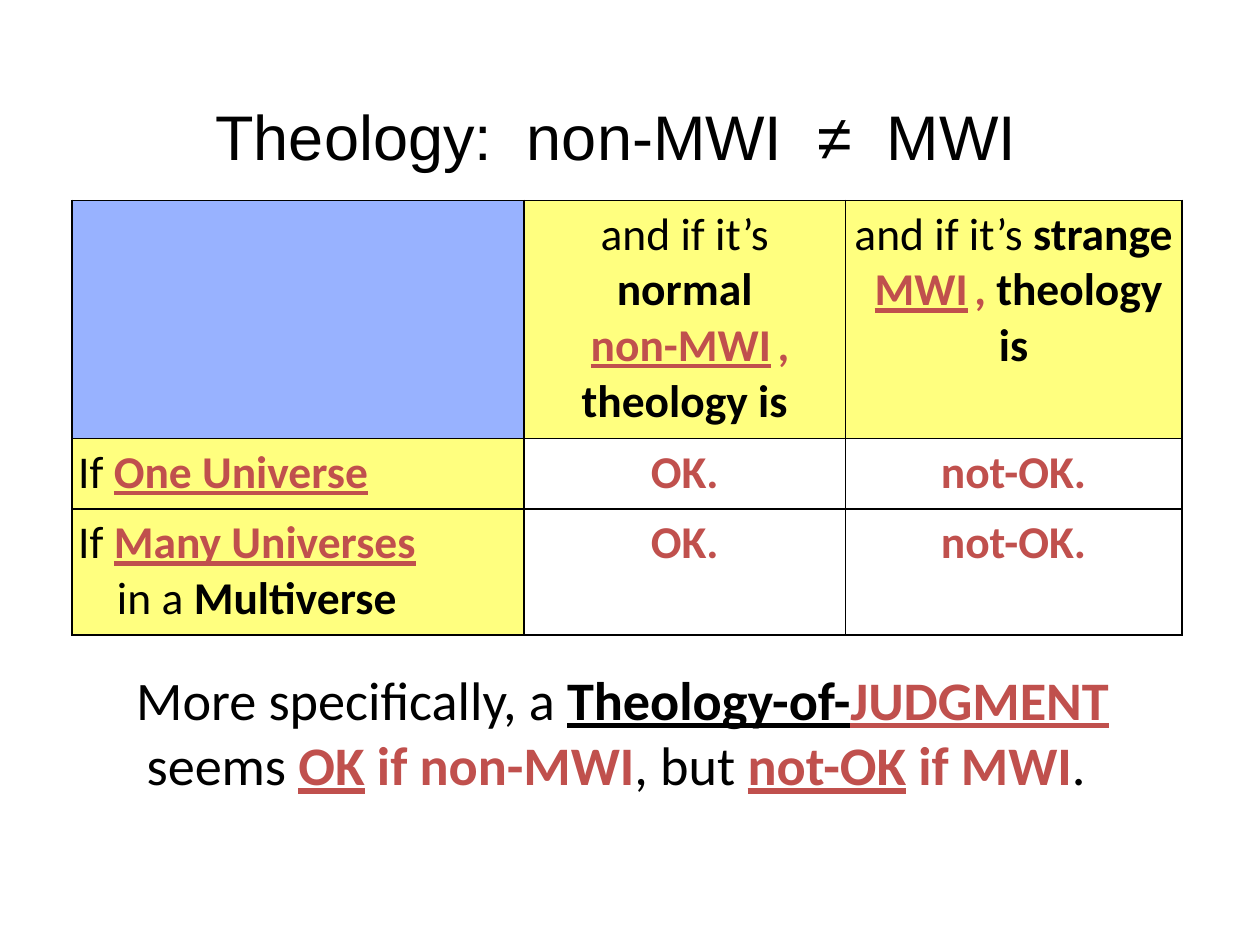
from lxml import etree
from pptx import Presentation
from pptx.dml.color import RGBColor
from pptx.enum.text import MSO_ANCHOR, MSO_AUTO_SIZE, PP_ALIGN
from pptx.oxml import parse_xml
from pptx.oxml.ns import nsdecls, qn
from pptx.util import Inches, Pt

CENTER, LEFT = PP_ALIGN.CENTER, PP_ALIGN.LEFT
MIDDLE, TOP = MSO_ANCHOR.MIDDLE, MSO_ANCHOR.TOP
NO_FIT = MSO_AUTO_SIZE.NONE
BLACK, RED, BLUE, YELLOW = "000000", "C0504D", "3366FF", "FFFF00"
MARGIN = Inches(0.05)


def color(value):
    return RGBColor.from_string(value)


def write_runs(paragraph, parts, size, alignment):
    paragraph.alignment = alignment
    for text, style, *own_size in parts:
        if text == "\n":
            paragraph.add_line_break()
            continue
        run = paragraph.add_run()
        run.text = text
        run.font.name = "Calibri"
        run.font.size = Pt(own_size[0] if own_size else size)
        run.font.bold = "b" in style
        run.font.underline = "u" in style
        run.font.color.rgb = color(RED if "r" in style else BLACK)


presentation = Presentation()
presentation.slide_width, presentation.slide_height = Inches(10), Inches(7.5)
slide = presentation.slides.add_slide(presentation.slide_layouts[1])
title, body = slide.shapes.title, slide.placeholders[1]

for shape, top, height, anchor in ((title, 0.68, 0.79, MIDDLE), (body, 5.22, 1.32, TOP)):
    shape.left, shape.top = Inches(0.39), Inches(top)
    shape.width, shape.height = Inches(9), Inches(height)
    frame = shape.text_frame
    frame.word_wrap, frame.auto_size, frame.vertical_anchor = True, NO_FIT, anchor
    frame.margin_left = frame.margin_right = frame.margin_top = frame.margin_bottom = MARGIN

title.text_frame.text = "Theology:  non-MWI  ≠  MWI"
paragraph = title.text_frame.paragraphs[0]
paragraph.alignment = CENTER
font = paragraph.runs[0].font
font.name, font.size, font.color.rgb = "Arial", Pt(36), color(BLACK)

paragraph = body.text_frame.paragraphs[0]
paragraph.space_before = Pt(0)
write_runs(paragraph, [
    (" ", "", 32), ("More specifically, a ", ""), ("Theology-of-", "bu"),
    ("JUDGMENT", "bur"), (" ", "bu"), ("seems ", ""), ("OK", "bur"),
    (" if non-MWI", "br"), (", but ", ""), ("not-OK", "bur"), (" if MWI", "br"), (".", ""),
], 31, CENTER)
properties = paragraph._p.get_or_add_pPr()
properties.set("marL", "0")
properties.set("indent", "0")
etree.SubElement(properties, qn("a:buNone"))

ok = [("OK.", "br")]
not_ok = [("not-OK.", "br")]
rows = [
    [
        [],
        [("and if it’s ", ""), ("normal", "b"), ("\n", ""), ("\u00a0", "b"),
         ("non-MWI", "bur"), (" ", "br", 16), (", ", "br"), ("theology is", "b")],
        [("and if it’s ", ""), ("strange", "b"), ("\n", ""), ("\u00a0", "b"),
         ("MWI", "bur"), (" ", "br", 16), (",", "br"), (" theology is", "b")],
    ],
    [[("If ", ""), ("One Universe", "bur")], ok, not_ok],
    [
        [("If ", ""), ("Many Universes", "bur"), ("\n", ""), ("   ", ""),
         (" ", "", 20), ("in a", "", 26), (" Multiverse", "b")],
        ok, not_ok,
    ],
]
table = slide.shapes.add_table(
    3, 3, Inches(0.57), Inches(1.59), Inches(8.82), Inches(3.45)).table
table.first_row = table.horz_banding = False
for column, width in zip(table.columns, (3.59, 2.55, 2.67)):
    column.width = Inches(width)
for row, height in zip(table.rows, (1.89, 0.56, 1)):
    row.height = Inches(height)

for row_index, row in enumerate(rows):
    for column_index, parts in enumerate(row):
        cell = table.cell(row_index, column_index)
        cell.margin_left = cell.margin_right = cell.margin_top = cell.margin_bottom = MARGIN
        write_runs(cell.text_frame.paragraphs[0], parts, 26, CENTER if column_index else LEFT)
        cell_properties = cell._tc.get_or_add_tcPr()
        for side in ("lnL", "lnR", "lnT", "lnB"):
            cell_properties.append(parse_xml(
                f'<a:{side} {nsdecls("a")} w="12700"><a:solidFill>'
                f'<a:srgbClr val="{BLACK}"/></a:solidFill></a:{side}>'))
        if row_index and column_index:
            cell.fill.background()
            continue
        cell.fill.solid()
        cell.fill.fore_color.rgb = color(YELLOW if row_index or column_index else BLUE)
        fill_color = cell_properties.find(qn("a:solidFill")).find(qn("a:srgbClr"))
        etree.SubElement(fill_color, qn("a:alpha")).set("val", "50000")

presentation.save("out.pptx")
